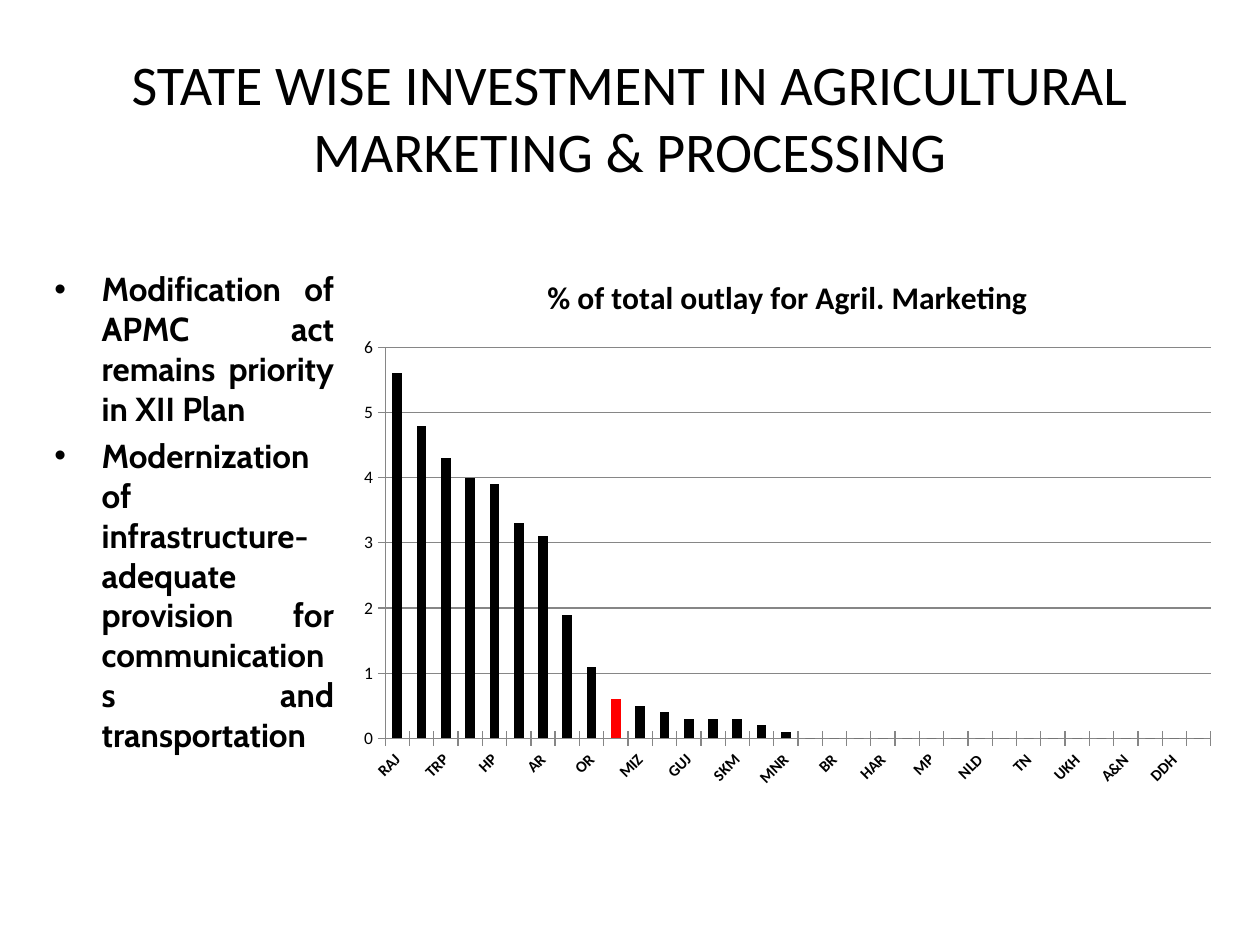
from lxml import etree
from pptx import Presentation
from pptx.chart.data import CategoryChartData
from pptx.dml.color import RGBColor
from pptx.enum.chart import XL_CHART_TYPE, XL_TICK_MARK
from pptx.enum.text import MSO_ANCHOR, PP_ALIGN
from pptx.oxml.ns import qn
from pptx.util import Pt

COLUMNS = XL_CHART_TYPE.COLUMN_CLUSTERED
CROSS = XL_TICK_MARK.CROSS
TOP, MIDDLE = MSO_ANCHOR.TOP, MSO_ANCHOR.MIDDLE
CENTER, JUSTIFY = PP_ALIGN.CENTER, PP_ALIGN.JUSTIFY

STATES = (
    "RAJ J&K TRP KEL HP PUD AR MGY OR MEAN MIZ CHG GUJ KAR SKM ASM MNR "
    "AP BR GOA HAR JHD MP MAHA NLD PUNJ TN UP UKH WB A&N CH DDH LKH"
).split()
SHARES = [5.6, 4.8, 4.3, 4, 3.9, 3.3, 3.1, 1.9, 1.1, 0.6,
          0.5, 0.4, 0.3, 0.3, 0.3, 0.2, 0.1]
SHARES += [0] * (len(STATES) - len(SHARES))
POINTS = [
    "Modification of APMC act remains priority in XII Plan",
    "Modernization of infrastructure-adequate provision for "
    "communications and transportation",
]


def color(value):
    return RGBColor.from_string(value)


class SlideBuilder:
    heading_font = "Calibri"
    body_font = "Cabin"
    ink = "000000"
    grid = "868686"
    accent = "FF0000"

    def __init__(self, page):
        self.page = page

    def style(self, font, size, bold=False, name=None):
        font.name = name or self.heading_font
        font.size = Pt(size)
        font.bold = bold
        font.color.rgb = color(self.ink)

    def text_frame(self, left, top, width, height, anchor):
        box = self.page.shapes.add_textbox(Pt(left), Pt(top), Pt(width), Pt(height))
        frame = box.text_frame
        frame.word_wrap = True
        frame.vertical_anchor = anchor
        return frame

    def title(self, text, *place):
        para = self.text_frame(*place, MIDDLE).paragraphs[0]
        para.text = text
        para.alignment = CENTER
        self.style(para.font, 32)

    def bullets(self, items, *place, indent=27):
        frame = self.text_frame(*place, TOP)
        for index, item in enumerate(items):
            para = frame.add_paragraph() if index else frame.paragraphs[0]
            para.text = item
            para.alignment = JUSTIFY
            para.space_before = Pt(4)
            self.style(para.font, 19, True, self.body_font)
            # Hanging bullet
            properties = para._p.get_or_add_pPr()
            properties.set("marL", str(Pt(indent)))
            properties.set("indent", str(-Pt(indent)))
            bullet = etree.Element(qn("a:buChar"), char="•")
            properties.find(qn("a:spcBef")).addnext(bullet)
            bullet_font = etree.Element(qn("a:buFont"), typeface="Arial")
            bullet.addprevious(bullet_font)

    def axis(self, axis, size, bold=False):
        axis.major_tick_mark = CROSS
        self.style(axis.tick_labels.font, size, bold)
        self.line(axis.format.line)

    def line(self, line):
        line.color.rgb = color(self.grid)
        line.width = Pt(0.75)

    def column_chart(self, title, categories, values, marked, *place):
        data = CategoryChartData()
        data.categories = categories
        data.add_series("Series 1", values)
        lengths = [Pt(length) for length in place]
        chart = self.page.shapes.add_chart(COLUMNS, *lengths, data).chart
        chart.has_legend = False
        self.style(chart.font, 10)

        # Chart title
        para = chart.chart_title.text_frame.paragraphs[0]
        para.text = title
        self.style(para.font, 18, True)
        chart.chart_title.include_in_layout = False

        # Axes
        self.axis(chart.category_axis, 9, True)
        labels = chart.category_axis._element.find(qn("c:txPr"))
        labels.find(qn("a:bodyPr")).set("rot", str(-45 * 60000))
        scale = chart.value_axis
        self.axis(scale, 10)
        scale.minimum_scale, scale.maximum_scale, scale.major_unit = 0, 6, 1
        scale.has_major_gridlines = True
        self.line(scale.major_gridlines.format.line)

        # Columns, with one marked
        plot = chart.plots[0]
        plot.gap_width = 150
        plot.vary_by_categories = False
        series = plot.series[0]
        series.invert_if_negative = False
        for fill, value in ((series.format.fill, self.ink),
                            (series.points[marked].format.fill, self.accent)):
            fill.solid()
            fill.fore_color.rgb = color(value)


def main():
    deck = Presentation()
    deck.slide_width, deck.slide_height = Pt(720), Pt(540)
    slide = SlideBuilder(deck.slides.add_slide(deck.slide_layouts[6]))

    # Heading
    slide.title("STATE WISE INVESTMENT IN AGRICULTURAL MARKETING & PROCESSING",
                36, 21.6, 648, 90)
    # Remarks on the left
    slide.bullets(POINTS, 24, 150, 174, 318)
    # State shares on the right, with the mean marked
    slide.column_chart("% of total outlay for Agril. Marketing", STATES, SHARES,
                       STATES.index("MEAN"), 198, 144, 504, 312)
    deck.save("out.pptx")


if __name__ == "__main__":
    main()
